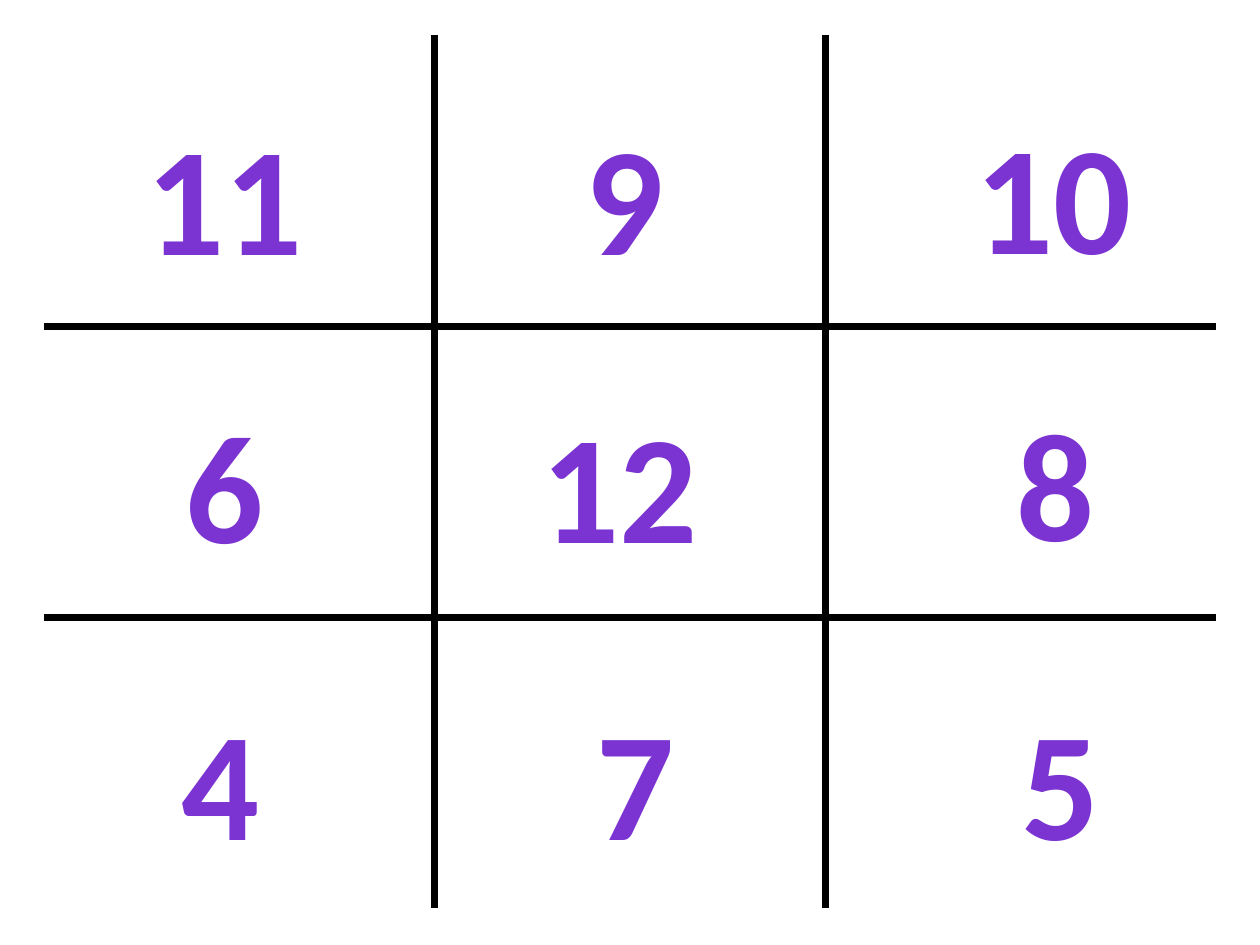
from dataclasses import dataclass

from lxml import etree
from pptx import Presentation
from pptx import util as u
from pptx.enum import text
from pptx.oxml import parse_xml
from pptx.oxml.ns import qn

NS = 'xmlns:a="http://schemas.openxmlformats.org/drawingml/2006/main"'


@dataclass(frozen=True)
class Theme:
    font: str = "Calibri"
    size: float = 88
    stops: tuple = ((0, "3D1B67"), (43, "7B34D2"), (48, "7330C4"), (100, "3D1B67"))
    edge: str = "5E457C"
    edge_pt: float = 0.71
    rule: str = "000000"
    rule_pt: float = 4.5


THEME = Theme()
SIDE = 3
LEFT, TOP, COL, ROW = 0.35, 0.28, 3.1, 2.31

# Number, centre x, top
NUMBERS = [
    ("11", 1.78, 0.76), ("9", 4.96, 0.76), ("10", 8.36, 0.75),
    ("6", 1.78, 3.04), ("12", 4.92, 3.04), ("8", 8.38, 3.03),
    ("4", 1.75, 5.4), ("7", 5.04, 5.4), ("5", 8.42, 5.4),
]


def add_edge(cell, tag, shown):
    """Draw one cell border, or leave it open."""
    props = cell._tc.get_or_add_tcPr()
    line = etree.SubElement(props, qn(f"a:{tag}"))
    if shown:
        line.set("w", str(u.Pt(THEME.rule_pt)))
        fill = etree.SubElement(line, qn("a:solidFill"))
        etree.SubElement(fill, qn("a:srgbClr"), val=THEME.rule)
    else:
        etree.SubElement(line, qn("a:noFill"))


def add_grid(slide):
    """Add the open three-by-three grid."""
    frame = slide.shapes.add_table(
        SIDE, SIDE, u.Inches(LEFT), u.Inches(TOP),
        u.Inches(COL * SIDE), u.Inches(ROW * SIDE))
    grid = frame.table
    grid.first_row = grid.horz_banding = False
    last = SIDE - 1
    for r in range(SIDE):
        for c in range(SIDE):
            cell = grid.cell(r, c)
            edges = {"lnL": c > 0, "lnR": c < last, "lnT": r > 0, "lnB": r < last}
            for tag, shown in edges.items():
                add_edge(cell, tag, shown)
            cell.fill.background()


def paint(run):
    """Give a run its gradient fill and thin outline."""
    stops = "".join(
        f'<a:gs pos="{pos * 1000}"><a:srgbClr val="{color}"/></a:gs>'
        for pos, color in THEME.stops)
    props = run._r.get_or_add_rPr()
    props.insert(0, parse_xml(
        f'<a:gradFill {NS}><a:gsLst>{stops}</a:gsLst>'
        '<a:lin ang="5400000" scaled="0"/></a:gradFill>'))
    props.insert(0, parse_xml(
        f'<a:ln {NS} w="{u.Pt(THEME.edge_pt)}"><a:solidFill>'
        f'<a:srgbClr val="{THEME.edge}"/></a:solidFill></a:ln>'))


def add_number(slide, label, mid, top):
    """Add one large number, centred on mid."""
    width = 0.89 if len(label) == 1 else 1.58
    box = slide.shapes.add_textbox(
        u.Inches(mid - width / 2), u.Inches(top), u.Inches(width), u.Inches(1.58))
    frame = box.text_frame
    frame.word_wrap = False
    frame.auto_size = text.MSO_AUTO_SIZE.SHAPE_TO_FIT_TEXT
    para = frame.paragraphs[0]
    para.alignment = text.PP_ALIGN.CENTER
    para.font.name = THEME.font
    para.font.size = u.Pt(THEME.size)
    para.font.bold = True
    run = para.add_run()
    run.text = label
    paint(run)


def main():
    deck = Presentation()
    deck.slide_width, deck.slide_height = u.Inches(10), u.Inches(7.5)
    slide = deck.slides.add_slide(deck.slide_layouts[6])
    add_grid(slide)
    for label, mid, top in NUMBERS:
        add_number(slide, label, mid, top)
    deck.save("out.pptx")


if __name__ == "__main__":
    main()
